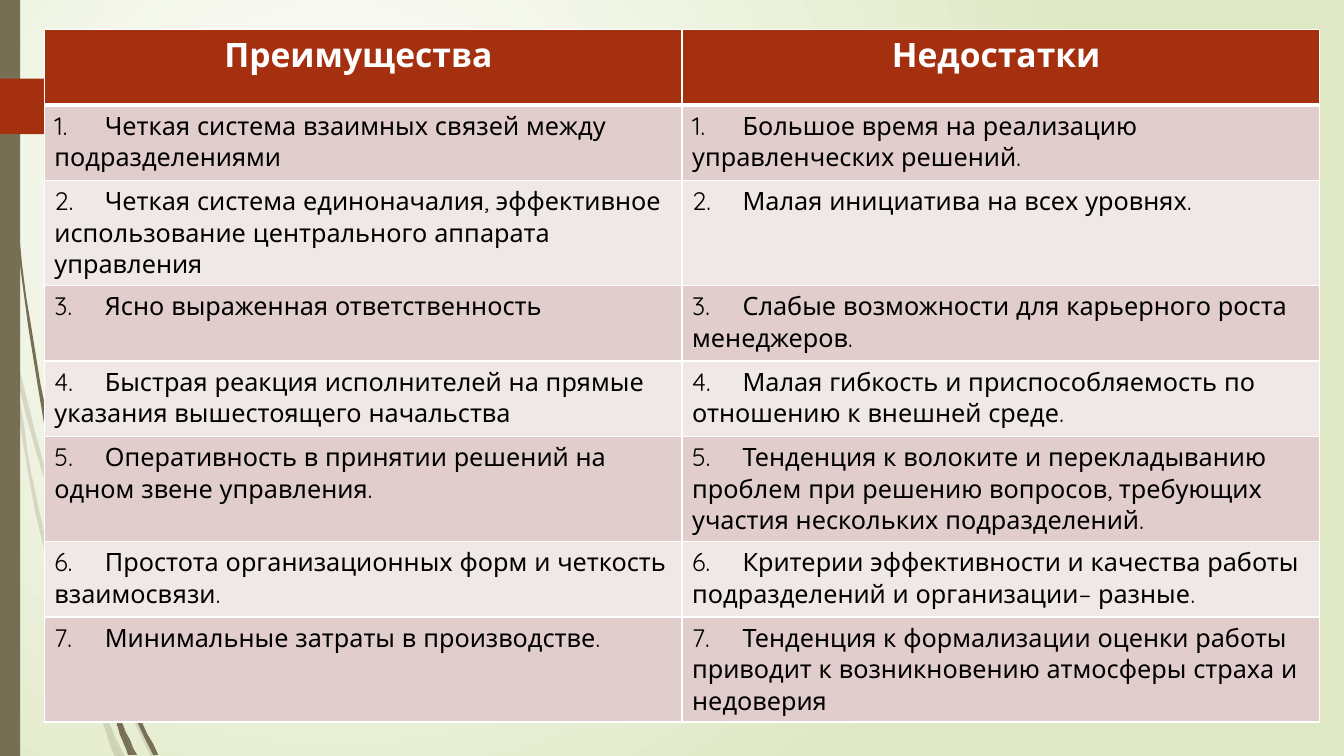
from pptx import Presentation
from pptx import util as u
from pptx.dml.color import RGBColor
from pptx.enum import shapes, text
from pptx.oxml import parse_xml
from pptx.oxml.ns import nsdecls, qn

# Content
HEADERS = ("Преимущества ", "Недостатки ")
ROWS = [
    ("Четкая система взаимных связей между подразделениями",
     "Большое время на реализацию управленческих решений."),
    ("Четкая система единоначалия, эффективное использование центрального аппарата управления",
     "Малая инициатива на всех уровнях."),
    ("Ясно выраженная ответственность",
     "Слабые возможности для карьерного роста менеджеров."),
    ("Быстрая реакция исполнителей на прямые указания вышестоящего начальства",
     "Малая гибкость и приспособляемость по отношению к внешней среде."),
    ("Оперативность в принятии решений на одном звене управления.",
     "Тенденция к волоките и перекладыванию проблем при решению вопросов, "
     "требующих участия нескольких подразделений."),
    ("Простота организационных форм и четкость взаимосвязи.",
     "Критерии эффективности и качества работы подразделений и организации– разные."),
    ("Минимальные затраты в производстве.",
     "Тенденция к формализации оценки работы приводит к возникновению "
     "атмосферы страха и недоверия"),
]

# Grass blades: a start point, then three points for each Bézier curve
PALE_BLADES = [
    [(58, 522), (66, 548), (75, 573), (84, 599), (84, 595), (84, 591), (85, 586),
     (77, 564), (69, 542), (62, 520), (43, 463), (28, 404), (14, 345),
     (15, 355), (16, 366), (17, 376), (29, 425), (42, 474), (58, 522)],
    [(92, 607), (91, 603), (89, 600), (88, 596), (88, 601), (88, 605), (88, 610),
     (99, 639), (110, 666), (123, 694), (131, 713), (141, 732), (150, 751),
     (155, 751), (155, 751), (155, 751), (145, 731), (136, 712), (127, 692),
     (115, 664), (103, 636), (92, 607)],
    [(119, 751), (124, 751), (124, 751), (124, 751), (117, 738), (111, 725), (105, 711),
     (109, 725), (114, 738), (119, 751)],
    [(93, 683), (84, 662), (77, 641), (70, 619), (53, 570), (41, 520), (31, 469),
     (26, 438), (21, 407), (17, 376), (15, 367), (13, 359), (11, 350),
     (15, 390), (21, 430), (28, 470), (37, 521), (49, 571), (65, 621),
     (73, 646), (82, 670), (92, 693), (95, 701), (98, 707), (101, 714),
     (100, 712), (99, 710), (99, 707), (96, 699), (94, 691), (93, 683)],
    [(101, 714), (104, 726), (109, 739), (114, 751), (119, 751), (119, 751), (119, 751),
     (113, 739), (106, 726), (101, 714)],
    [(96, 692), (95, 689), (94, 686), (93, 683), (94, 691), (96, 699), (99, 707),
     (99, 710), (100, 712), (101, 714), (106, 726), (113, 739), (119, 751),
     (114, 738), (109, 725), (105, 711), (102, 705), (99, 699), (96, 692)],
]
DARK_BLADES = [
    [(7, 110), (9, 151), (12, 192), (17, 233), (21, 274), (26, 314), (33, 355),
     (39, 396), (47, 436), (56, 477), (57, 478), (57, 480), (57, 481),
     (57, 473), (55, 465), (55, 457), (55, 456), (55, 454), (55, 453),
     (48, 420), (41, 388), (36, 355), (29, 314), (23, 274), (19, 232),
     (14, 191), (10, 151), (8, 109), (7, 89), (6, 68), (5, 48),
     (4, 32), (4, 16), (4, 0), (3, 0), (3, 0), (3, 0),
     (3, 16), (4, 32), (4, 48), (5, 68), (5, 89), (7, 110)],
    [(113, 649), (112, 646), (111, 644), (110, 641), (110, 646), (110, 651), (111, 656),
     (117, 674), (124, 691), (132, 708), (138, 722), (145, 736), (152, 749),
     (157, 749), (157, 749), (157, 749), (150, 735), (143, 721), (136, 706),
     (128, 687), (121, 668), (113, 649)],
    [(133, 749), (136, 749), (136, 749), (136, 749), (131, 740), (126, 729), (122, 719),
     (125, 729), (128, 740), (133, 749)],
    [(117, 722), (120, 731), (124, 741), (127, 749), (131, 749), (131, 749), (131, 749),
     (126, 741), (122, 731), (117, 722)],
    [(116, 706), (114, 701), (112, 696), (110, 691), (112, 700), (114, 709), (116, 717),
     (116, 719), (117, 720), (117, 722), (122, 731), (126, 741), (130, 749),
     (133, 749), (133, 749), (133, 749), (128, 740), (125, 729), (122, 719),
     (119, 714), (118, 710), (116, 706)],
]

THEME = {
    "font": "Quicksand", "header_size": 24, "body_size": 18,
    "white": "FFFFFF", "black": "000000", "glow": "DFE8C4",
    "accent": "A53010", "olive": "766F54", "bands": ("E1CDCC", "F0E8E7"),
}

# Geometry in px, 100 to the inch
PX = 9144
SLIDE_SIZE = (1333, 750)
SIDE_BAR = (0, 0, 20, 750)
MARKER = (0, 78, 174, 55)
TABLE = (44, 29, 1265, 676)
ROW_HEIGHT, TALL_ROW, TALL_HEIGHT = 75, 2, 96
TAB_STOP = 50
CURVE_STEPS = 4


def px(*lengths):
    return [u.Emu(length * PX) for length in lengths]


def colour(name):
    return RGBColor.from_string(THEME.get(name, name))


def paint(shape, name):
    shape.shadow.inherit = False
    shape.fill.solid()
    shape.fill.fore_color.rgb = colour(name)
    shape.line.fill.background()


def flatten(points):
    outline = [points[0]]
    for i in range(0, len(points) - 1, 3):
        a, b, c, d = points[i:i + 4]
        for step in range(1, CURVE_STEPS + 1):
            t = step / CURVE_STEPS
            s = 1 - t
            outline.append(tuple(
                s**3 * a[k] + 3 * s * s * t * b[k] + 3 * s * t * t * c[k] + t**3 * d[k]
                for k in (0, 1)))
    return outline


def draw_blade(slide, points, opacity):
    start, *rest = flatten(points)
    builder = slide.shapes.build_freeform(*start, scale=PX)
    builder.add_line_segments(rest, close=True)
    blade = builder.convert_to_shape()
    paint(blade, "olive")
    if opacity < 100:
        tint = blade.fill._xPr.find(qn("a:solidFill"))[0]
        tint.append(parse_xml(f'<a:alpha {nsdecls("a")} val="{opacity * 1000}"/>'))


def set_borders(cell, widths):
    for side, points in zip("LRTB", widths):
        cell._tc.get_or_add_tcPr().append(parse_xml(
            f'<a:ln{side} {nsdecls("a")} w="{u.Pt(points)}"><a:solidFill>'
            f'<a:srgbClr val="{THEME["white"]}"/></a:solidFill></a:ln{side}>'))


def fill_cell(cell, words, row):
    header = row == 0
    set_borders(cell, (1, 1, 3 if row == 1 else 1, 3 if header else 1))
    cell.fill.solid()
    cell.fill.fore_color.rgb = colour("accent" if header else THEME["bands"][(row - 1) % 2])
    cell.text = words if header else f"{row}.\t{words}"
    paragraph = cell.text_frame.paragraphs[0]
    paragraph.alignment = text.PP_ALIGN.CENTER if header else text.PP_ALIGN.LEFT
    if not header:
        paragraph._p.get_or_add_pPr().append(parse_xml(
            f'<a:tabLst {nsdecls("a")}><a:tab pos="{TAB_STOP * PX}" algn="l"/></a:tabLst>'))
    font = paragraph.font
    font.name = THEME["font"]
    font.size = u.Pt(THEME["header_size" if header else "body_size"])
    font.bold = header
    font.color.rgb = colour("white" if header else "black")


def main():
    presentation = Presentation()
    presentation.slide_width, presentation.slide_height = px(*SLIDE_SIZE)
    slide = presentation.slides.add_slide(presentation.slide_layouts[6])

    # Radial background
    background = slide.background.fill
    background.gradient()
    for stop, position, name in zip(background.gradient_stops, (0, 1), ("white", "glow")):
        stop.position = position
        stop.color.rgb = colour(name)
    linear = slide.element.find(".//" + qn("a:lin"))
    linear.getparent().replace(linear, parse_xml(
        f'<a:path {nsdecls("a")} path="circle"><a:fillToRect l="50000" t="50000" '
        'r="100000" b="100000"/></a:path>'))

    # Grass, side bar and marker
    for blades, opacity in ((PALE_BLADES, 20), (DARK_BLADES, 100)):
        for points in blades:
            draw_blade(slide, points, opacity)
    paint(slide.shapes.add_shape(shapes.MSO_SHAPE.RECTANGLE, *px(*SIDE_BAR)), "olive")
    marker = slide.shapes.add_shape(shapes.MSO_SHAPE.PENTAGON, *px(*MARKER))
    marker.adjustments[0] = 0.45
    paint(marker, "accent")

    # Table of advantages and drawbacks
    grid = [HEADERS, *ROWS]
    frame = slide.shapes.add_table(len(grid), len(HEADERS), *px(*TABLE))
    table = frame.table
    table.horz_banding = False
    for row, cells in enumerate(grid):
        table.rows[row].height = px(TALL_HEIGHT if row == TALL_ROW else ROW_HEIGHT)[0]
        for column, words in enumerate(cells):
            fill_cell(table.cell(row, column), words, row)
    frame.height = px(TABLE[3])[0]

    presentation.save("out.pptx")


if __name__ == "__main__":
    main()
